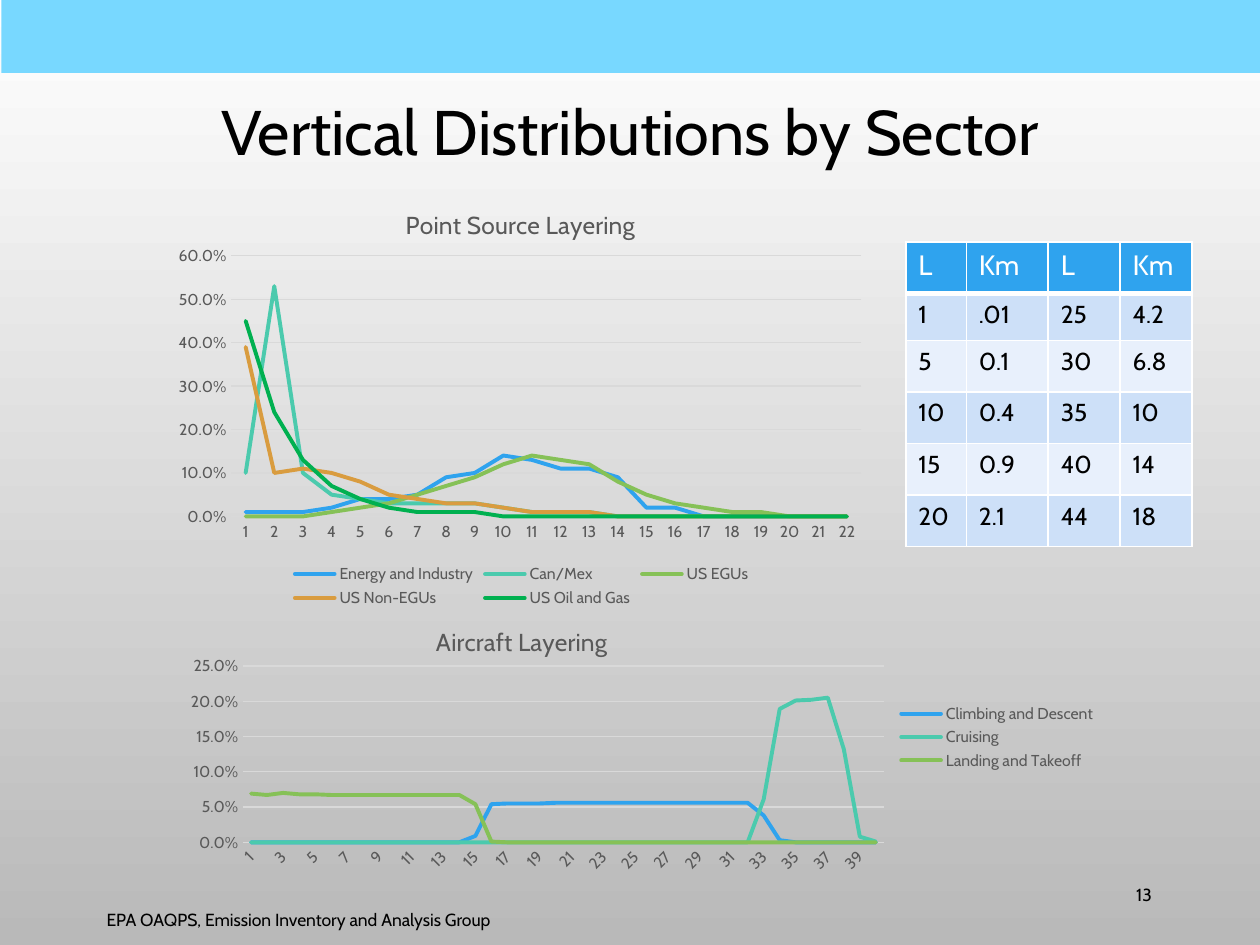
"""Builds a slide on vertical emission distributions by sector."""
import pptx
import pptx.chart.data
import pptx.dml.color
import pptx.enum.chart
import pptx.enum.shapes
import pptx.enum.text
import pptx.oxml
import pptx.oxml.ns
import pptx.util

Cm = pptx.util.Cm
Pt = pptx.util.Pt
RGBColor = pptx.dml.color.RGBColor
qn = pptx.oxml.ns.qn
LegendPosition = pptx.enum.chart.XL_LEGEND_POSITION
Align = pptx.enum.text.PP_ALIGN

FONT = "Cabin"
BLACK = RGBColor(0, 0, 0)
WHITE = RGBColor(255, 255, 255)
SILVER = RGBColor(0xB9, 0xB9, 0xB9)
SKY = RGBColor(0x78, 0xD8, 0xFF)
GREY = RGBColor(0x59, 0x59, 0x59)
RULE = RGBColor(0xD9, 0xD9, 0xD9)
BLUE = RGBColor(0x2F, 0xA3, 0xEE)
TEAL = RGBColor(0x4B, 0xCA, 0xAD)
LIME = RGBColor(0x86, 0xC1, 0x57)
OCHRE = RGBColor(0xD9, 0x9C, 0x3F)
GREEN = RGBColor(0x00, 0xB0, 0x50)
BANDS = [RGBColor(0xE8, 0xF0, 0xFC), RGBColor(0xCD, 0xE0, 0xF8)]

TITLE = "Vertical Distributions by Sector"
FOOTERS = [
    ("EPA OAQPS, Emission Inventory and Analysis Group", (1.9, 18.03, 13.9, 1.02), Align.LEFT),
    ("13", (21.87, 17.53, 1.6, 1.02), Align.RIGHT),
]
LAYERS = [
    ("L", "Km", "L", "Km"),
    ("1", ".01", "25", "4.2"),
    ("5", "0.1", "30", "6.8"),
    ("10", "0.4", "35", "10"),
    ("15", "0.9", "40", "14"),
    ("20", "2.1", "44", "18"),
]
COLUMN_WIDTHS = [1.22, 1.65, 1.45, 1.45]
ROW_HEIGHTS = [1.04, 0.94] + [1.04] * 4

CHARTS = [
    {
        "title": "Point Source Layering",
        "box": (3.38, 3.58, 14.27, 8.76),
        "top": 0.6, "step": 0.1, "label_turn": 0,
        "legend": LegendPosition.BOTTOM,
        "layouts": {"title": (0.33, 0.06), "plotArea": (0.09, 0.18, 0.89, 0.6),
                    "legend": (0.17, 0.88, 0.66, 0.12)},
        "series": [
            ("Energy and Industry", BLUE,
             [0.01, 0.01, 0.01, 0.02, 0.04, 0.04, 0.05, 0.09, 0.1, 0.14, 0.13,
              0.11, 0.11, 0.09, 0.02, 0.02] + [0] * 6),
            ("Can/Mex", TEAL,
             [0.1, 0.53, 0.1, 0.05, 0.04, 0.03, 0.03, 0.03, 0.03, 0.02, 0.01,
              0.01, 0.01] + [0] * 9),
            ("US EGUs", LIME,
             [0, 0, 0, 0.01, 0.02, 0.03, 0.05, 0.07, 0.09, 0.12, 0.14, 0.13,
              0.12, 0.08, 0.05, 0.03, 0.02, 0.01, 0.01, 0, 0, 0]),
            ("US Non-EGUs", OCHRE,
             [0.39, 0.1, 0.11, 0.1, 0.08, 0.05, 0.04, 0.03, 0.03, 0.02, 0.01,
              0.01, 0.01] + [0] * 9),
            ("US Oil and Gas", GREEN,
             [0.45, 0.24, 0.13, 0.07, 0.04, 0.02, 0.01, 0.01, 0.01] + [0] * 13),
        ],
    },
    {
        "title": "Aircraft Layering",
        "box": (3.38, 11.99, 19, 5.74),
        "top": 0.25, "step": 0.05, "label_turn": -45,
        "legend": LegendPosition.RIGHT,
        "layouts": {"title": (0.28, 0.09), "plotArea": (0.08, 0.25, 0.68, 0.62),
                    "legend": (0.77, 0.37, 0.22, 0.26)},
        "series": [
            ("Climbing and Descent", BLUE,
             [0] * 14 + [0.009, 0.054] + [0.055] * 3 + [0.056] * 13 + [0.038, 0.003] + [0] * 6),
            ("Cruising", TEAL,
             [0] * 32 + [0.061, 0.189, 0.201, 0.202, 0.205, 0.132, 0.008, 0.001]),
            ("Landing and Takeoff", LIME,
             [0.069, 0.067, 0.07, 0.068, 0.068] + [0.067] * 9 + [0.054, 0.001] + [0] * 24),
        ],
    },
]


def style(font, size, color):
    font.name, font.size, font.bold = FONT, Pt(size), False
    font.color.rgb = color


def write(frame, text, size, color, align=None):
    paragraph = frame.paragraphs[0]
    paragraph.alignment = align
    run = paragraph.add_run()
    run.text = text
    style(run.font, size, color)
    return paragraph


def place(chart, part, fractions):
    parent = next(chart.element.iter(qn(f"c:{part}")))
    for old in parent.findall(qn("c:layout")):
        parent.remove(old)
    inner = '<c:layoutTarget val="inner"/>' if part == "plotArea" else ""
    modes = '<c:xMode val="edge"/><c:yMode val="edge"/>'
    sizes = "".join(f'<c:{name} val="{value}"/>' for name, value in zip("xywh", fractions))
    layout = pptx.oxml.parse_xml(
        f'<c:layout {pptx.oxml.ns.nsdecls("c")}><c:manualLayout>'
        f"{inner}{modes}{sizes}</c:manualLayout></c:layout>")
    parent.insert(0 if part == "plotArea" else 1, layout)


def add_line_chart(slide, content):
    data = pptx.chart.data.CategoryChartData(number_format="0.0%")
    data.categories = [str(n + 1) for n in range(len(content["series"][0][2]))]
    for name, _, values in content["series"]:
        data.add_series(name, values)
    chart = slide.shapes.add_chart(
        pptx.enum.chart.XL_CHART_TYPE.LINE, *map(Cm, content["box"]), data).chart
    style(chart.font, 10, BLACK)
    chart.has_title = True
    write(chart.chart_title.text_frame, content["title"], 14, GREY)
    chart.has_legend = True
    chart.legend.position = content["legend"]
    chart.legend.include_in_layout = False
    style(chart.legend.font, 9, GREY)

    layers, share = chart.category_axis, chart.value_axis
    for axis in (layers, share):
        axis.major_tick_mark = axis.minor_tick_mark = pptx.enum.chart.XL_TICK_MARK.NONE
        style(axis.tick_labels.font, 9, GREY)
    share.minimum_scale, share.maximum_scale = 0, content["top"]
    share.major_unit = content["step"]
    share.tick_labels.number_format = "0.0%"
    share.tick_labels.number_format_is_linked = False
    share.format.line.fill.background()
    share.has_major_gridlines = True
    for line in (layers.format.line, share.major_gridlines.format.line):
        line.color.rgb, line.width = RULE, Pt(0.75)
    if content["label_turn"]:
        body = next(layers.tick_labels.font._element.getparent().getparent().getparent()
                    .iter(qn("a:bodyPr")))
        body.set("rot", str(content["label_turn"] * 60000))

    for series, (_, color, _) in zip(chart.plots[0].series, content["series"]):
        series.smooth = False
        series.marker.style = pptx.enum.chart.XL_MARKER_STYLE.NONE
        series.format.line.color.rgb = color
        series.format.line.width = Pt(2.25)
        next(series.format.line._get_or_add_ln().iter(qn("a:ln"))).set("cap", "rnd")
    for part, fractions in content["layouts"].items():
        place(chart, part, fractions)


def add_layer_table(slide):
    table = slide.shapes.add_table(
        len(LAYERS), len(COLUMN_WIDTHS), Cm(18.26), Cm(4.88),
        Cm(sum(COLUMN_WIDTHS)), Cm(sum(ROW_HEIGHTS))).table
    for column, width in zip(table.columns, COLUMN_WIDTHS):
        column.width = Cm(width)
    for r, texts in enumerate(LAYERS):
        table.rows[r].height = Cm(ROW_HEIGHTS[r])
        for c, text in enumerate(texts):
            cell = table.cell(r, c)
            for side in "LRTB":
                points = 3 if r == 0 and side == "B" else 1
                cell._tc.get_or_add_tcPr().append(pptx.oxml.parse_xml(
                    f'<a:ln{side} {pptx.oxml.ns.nsdecls("a")} w="{Pt(points)}">'
                    f'<a:solidFill><a:srgbClr val="{WHITE}"/></a:solidFill></a:ln{side}>'))
            cell.fill.solid()
            cell.fill.fore_color.rgb = BANDS[r % 2] if r else BLUE
            write(cell.text_frame, text, 14 if r else 16, BLACK if r else WHITE)


def main():
    deck = pptx.Presentation()
    deck.slide_width, deck.slide_height = Cm(25.4), Cm(19.05)
    slide = deck.slides.add_slide(deck.slide_layouts[5])
    backdrop = slide.background.fill
    backdrop.gradient()
    backdrop.gradient_angle = 270
    for stop, color in zip(backdrop.gradient_stops, (WHITE, SILVER)):
        stop.color.rgb = color

    band = slide.shapes.add_shape(
        pptx.enum.shapes.MSO_SHAPE.RECTANGLE, Cm(0.03), 0, Cm(25.4), Cm(1.47))
    band.shadow.inherit = False
    band.fill.solid()
    band.fill.fore_color.rgb = SKY
    band.line.fill.background()

    heading = slide.shapes.title
    heading.left, heading.top, heading.width, heading.height = map(Cm, (1.9, 1.5, 21.6, 2.44))
    heading.text_frame.vertical_anchor = pptx.enum.text.MSO_ANCHOR.MIDDLE
    write(heading.text_frame, TITLE, 36, BLACK, Align.CENTER).line_spacing = 0.9

    for text, box, align in FOOTERS:
        frame = slide.shapes.add_textbox(*map(Cm, box)).text_frame
        frame.word_wrap = True
        frame.vertical_anchor = pptx.enum.text.MSO_ANCHOR.MIDDLE
        write(frame, text, 10, BLACK, align)
    for content in CHARTS:
        add_line_chart(slide, content)
    add_layer_table(slide)
    deck.save("out.pptx")


if __name__ == "__main__":
    main()
